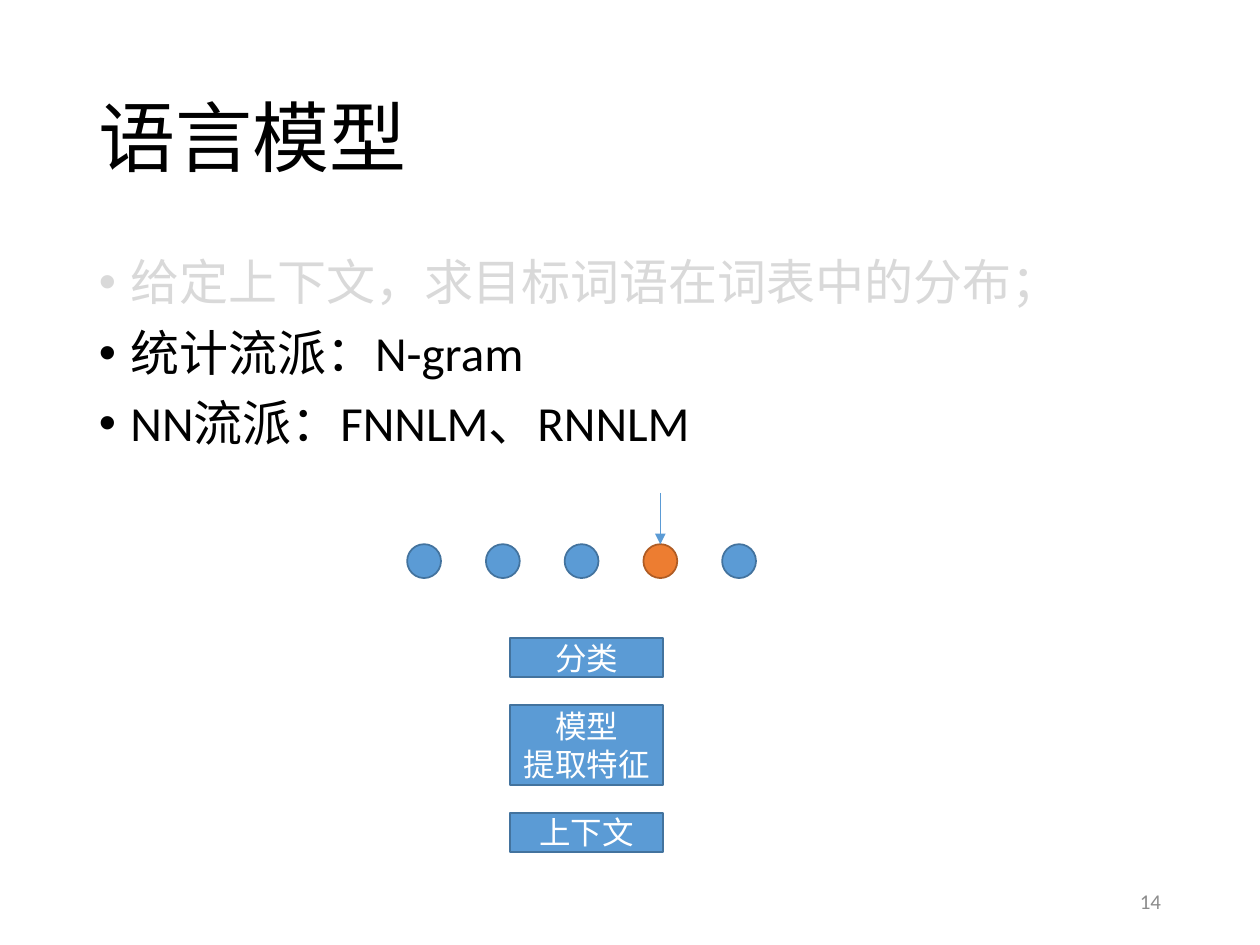
from dataclasses import dataclass

from lxml.etree import SubElement
from pptx import Presentation
from pptx.dml.color import RGBColor
from pptx.enum.shapes import MSO_CONNECTOR, MSO_SHAPE
from pptx.enum.text import MSO_ANCHOR, PP_ALIGN
from pptx.oxml.ns import qn
from pptx.util import Inches, Pt

CELL = 0.625
COLUMNS, ROWS = 16, 12
FONT = "Calibri"
COLORS = {
    "text": "000000",
    "faded": "D9D9D9",
    "number": "8C8C8C",
    "white": "FFFFFF",
    "blue": "5B9BD5",
    "blue_edge": "43739E",
    "orange": "ED7D31",
    "orange_edge": "AF5C24",
}


@dataclass(frozen=True)
class Area:
    column: float
    row: float
    columns: float
    rows: float

    def lengths(self) -> tuple:
        return tuple(map(grid, (self.column, self.row, self.columns, self.rows)))


@dataclass(frozen=True)
class Line:
    text: str
    size: int
    color: str = "text"
    align: PP_ALIGN = PP_ALIGN.LEFT
    spacing: float = 1.0
    before: int = 0
    bullet: bool = False


@dataclass(frozen=True)
class Stage:
    labels: tuple
    rows: float


TITLE_AREA = Area(1.1, 0.64, 13.79, 2.32)
BODY_AREA = Area(1.1, 3.2, 13.79, 7.62)
NUMBER_AREA = Area(11.3, 11.12, 3.6, 0.64)
BULLETS = (
    ("给定上下文，求目标词语在词表中的分布；", "faded"),
    ("统计流派：N-gram", "text"),
    ("NN流派：FNNLM、RNNLM", "text"),
)
STAGES = (
    Stage(("分类",), 0.5),
    Stage(("模型", "提取特征"), 1.02),
    Stage(("上下文",), 0.5),
)
STAGE_COLUMN, STAGE_ROW, STAGE_COLUMNS, STAGE_GAP = 6.48, 8.1, 1.94, 0.35
WORD_COLUMN, WORD_ROW, WORD_SIZE = 5.17, 6.91, 0.43
WORD_COUNT, TARGET_WORD = 5, 3
ARROW_ROW = 6.26


def grid(cells: float):
    return Inches(cells * CELL)


def color_of(name: str) -> RGBColor:
    return RGBColor.from_string(COLORS[name])


def write_lines(frame, lines, anchor=MSO_ANCHOR.MIDDLE) -> None:
    frame.word_wrap = True
    frame.vertical_anchor = anchor
    for index, line in enumerate(lines):
        para = frame.paragraphs[0] if index == 0 else frame.add_paragraph()
        para.text = line.text
        para.alignment = line.align
        para.line_spacing = line.spacing
        para.space_before = Pt(line.before)
        para.font.name = FONT
        para.font.size = Pt(line.size)
        para.font.color.rgb = color_of(line.color)
        if line.bullet:
            add_bullet(para)


def add_bullet(para) -> None:
    properties = para._p.get_or_add_pPr()
    properties.set("marL", str(Inches(0.25)))
    properties.set("indent", str(Inches(-0.25)))
    bullet_font = SubElement(properties, qn("a:buFont"))
    bullet_font.set("typeface", "Arial")
    bullet = SubElement(properties, qn("a:buChar"))
    bullet.set("char", "•")
    properties.append(properties.find(qn("a:defRPr")))


def add_text(page, area: Area, lines, anchor=MSO_ANCHOR.MIDDLE) -> None:
    box = page.shapes.add_textbox(*area.lengths())
    write_lines(box.text_frame, lines, anchor)


def add_filled(page, kind: MSO_SHAPE, area: Area, color: str):
    shape = page.shapes.add_shape(kind, *area.lengths())
    shape.shadow.inherit = False
    shape.fill.solid()
    shape.fill.fore_color.rgb = color_of(color)
    shape.line.color.rgb = color_of(f"{color}_edge")
    shape.line.width = Pt(1)
    return shape


def add_stages(page) -> None:
    row = STAGE_ROW
    for stage in STAGES:
        area = Area(STAGE_COLUMN, row, STAGE_COLUMNS, stage.rows)
        box = add_filled(page, MSO_SHAPE.RECTANGLE, area, "blue")
        lines = [Line(label, 18, "white", PP_ALIGN.CENTER) for label in stage.labels]
        write_lines(box.text_frame, lines)
        row += stage.rows + STAGE_GAP


def add_words(page) -> None:
    for index in range(WORD_COUNT):
        color = "orange" if index == TARGET_WORD else "blue"
        area = Area(WORD_COLUMN + index, WORD_ROW, WORD_SIZE, WORD_SIZE)
        add_filled(page, MSO_SHAPE.OVAL, area, color)


def add_target_arrow(page) -> None:
    column = grid(WORD_COLUMN + TARGET_WORD + WORD_SIZE / 2)
    arrow = page.shapes.add_connector(
        MSO_CONNECTOR.STRAIGHT, column, grid(ARROW_ROW), column, grid(WORD_ROW)
    )
    arrow.line.color.rgb = color_of("blue")
    arrow.line.width = Pt(0.5)
    SubElement(arrow.line._get_or_add_ln(), qn("a:tailEnd")).set("type", "triangle")
    SubElement(arrow._element.spPr, qn("a:effectLst"))


def main() -> None:
    deck = Presentation()
    deck.slide_width, deck.slide_height = grid(COLUMNS), grid(ROWS)
    page = deck.slides.add_slide(deck.slide_layouts[6])
    add_text(page, TITLE_AREA, [Line("语言模型", 44, spacing=0.9)])
    bullets = [
        Line(text, 28, color, spacing=0.9, before=10, bullet=True)
        for text, color in BULLETS
    ]
    add_text(page, BODY_AREA, bullets, MSO_ANCHOR.TOP)
    add_stages(page)
    add_words(page)
    add_target_arrow(page)
    add_text(page, NUMBER_AREA, [Line("14", 12, "number", PP_ALIGN.RIGHT)])
    deck.save("out.pptx")


if __name__ == "__main__":
    main()
